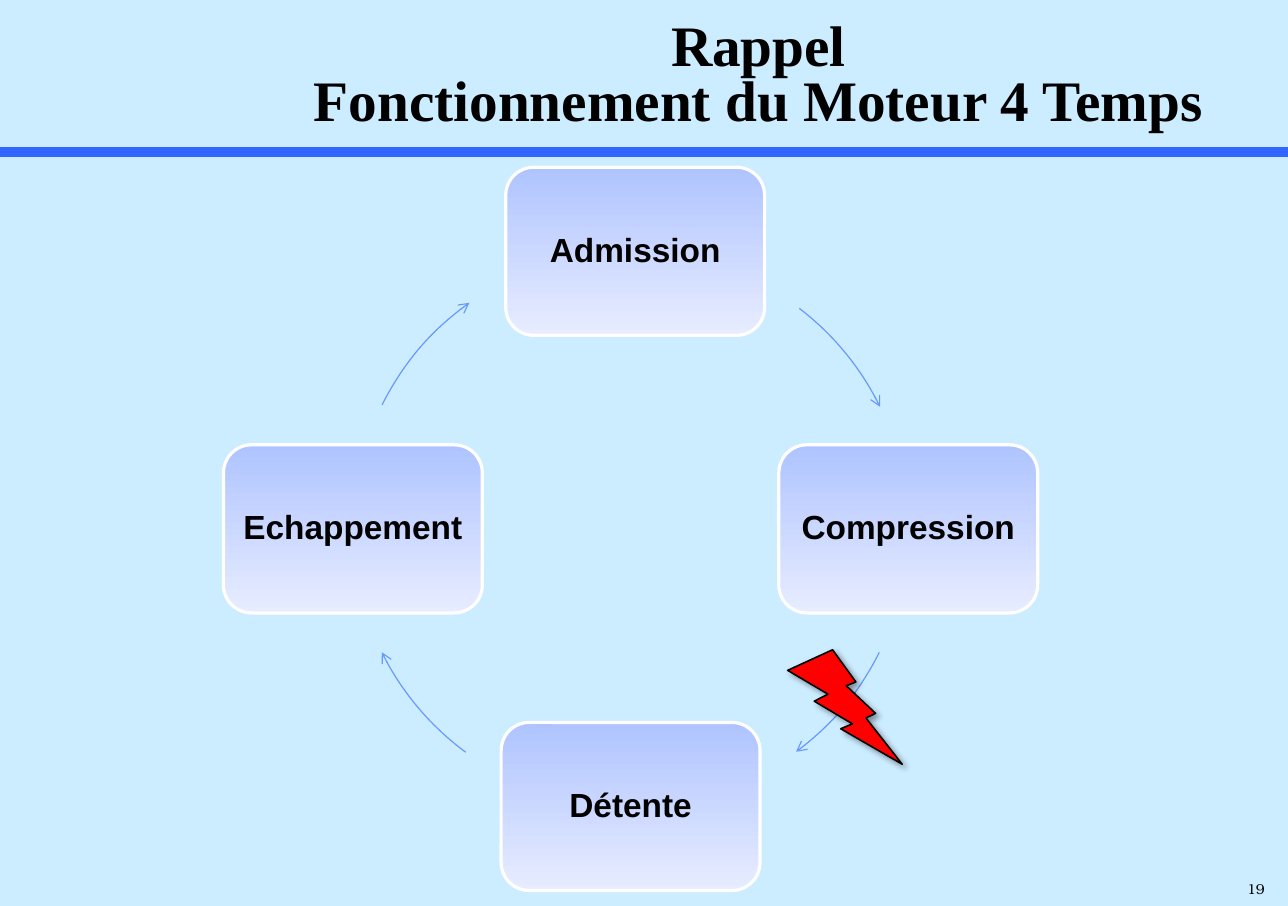
from math import cos, radians, sin

from lxml.etree import SubElement
from pptx import Presentation
from pptx.dml.color import RGBColor
from pptx.enum.shapes import MSO_CONNECTOR, MSO_SHAPE
from pptx.enum.text import MSO_ANCHOR, PP_ALIGN
from pptx.oxml.ns import qn
from pptx.util import Pt

COLORS = {
    "background": "CCECFF",
    "rule": "3366FF",
    "arrow": "6699FF",
    "step_top": "AFC4FF",
    "step_bottom": "E7ECFF",
    "step_border": "FFFFFF",
    "spark": "FF0000",
    "ink": "000000",
}
WIDTH, HEIGHT = Pt(810), Pt(570)

# Percentages of the slide's width (x) and height (y)
RING_X, RING_Y = 48.96, 58.38
RADIUS_X = 21.56
RADIUS_Y = RADIUS_X * WIDTH / HEIGHT
STEP_WIDTH, STEP_HEIGHT = 20.1, 18.55

# Name, angle on the ring (clockwise degrees), sideways shift
STEPS = [
    ("Admission", 270, 0.36),
    ("Compression", 0, 0),
    ("Détente", 90, 0),
    ("Echappement", 180, 0),
]
# Start and end angles of the arrows, clockwise degrees
ARROWS = [(307.4, 333.9), (26.4, 53.4), (126.4, 153.6), (206.5, 234.5)]


def color(name):
    return RGBColor.from_string(COLORS[name])


def area(left, top, width, height):
    """Turn percentages of the slide into lengths."""
    return (round(WIDTH * left / 100), round(HEIGHT * top / 100),
            round(WIDTH * width / 100), round(HEIGHT * height / 100))


def centred_area(x, y, width, height):
    return area(x - width / 2, y - height / 2, width, height)


def write(frame, text, *, font, size, bold=False, align=PP_ALIGN.CENTER,
          spacing=0.9, wrap=True):
    frame.word_wrap = wrap
    frame.vertical_anchor = MSO_ANCHOR.MIDDLE
    paragraph = frame.paragraphs[0]
    paragraph.text = text
    paragraph.alignment = align
    paragraph.line_spacing = spacing
    paragraph.font.name = font
    paragraph.font.size = Pt(size)
    paragraph.font.bold = bold
    paragraph.font.color.rgb = color("ink")


def add_title(slide, text):
    title = slide.shapes.title
    title.left, title.top, title.width, title.height = area(
        17.78, 1.77, 82.22, 13.64)
    write(title.text_frame, text, font="Times New Roman", size=36, bold=True,
          spacing=0.8)


def add_rule(slide, y):
    left, top, width, _ = area(0, y, 100, 0)
    rule = slide.shapes.add_connector(
        MSO_CONNECTOR.STRAIGHT, left, top, left + width, top)
    rule.line.color.rgb = color("rule")
    rule.line.width = Pt(6)
    SubElement(rule._element.spPr, qn("a:effectLst"))


def add_step(slide, name, angle, shift):
    x = RING_X + RADIUS_X * cos(radians(angle)) + shift
    y = RING_Y + RADIUS_Y * sin(radians(angle))
    step = slide.shapes.add_shape(
        MSO_SHAPE.ROUNDED_RECTANGLE,
        *centred_area(x, y, STEP_WIDTH, STEP_HEIGHT))
    step.shadow.inherit = False
    step.fill.gradient()
    step.fill.gradient_angle = 270
    for stop, shade in zip(step.fill.gradient_stops,
                           ("step_top", "step_bottom")):
        stop.color.rgb = color(shade)
    step.line.color.rgb = color("step_border")
    step.line.width = Pt(2)
    write(step.text_frame, name, font="Arial", size=21, bold=True)


def add_ring_arrow(slide, start, end):
    arrow = slide.shapes.add_shape(
        MSO_SHAPE.ARC,
        *centred_area(RING_X, RING_Y, 2 * RADIUS_X, 2 * RADIUS_Y))
    arrow.shadow.inherit = False
    # Adjustments count in 100000ths, angles in 60000ths of a degree
    arrow.adjustments[0] = start * 0.6
    arrow.adjustments[1] = end * 0.6
    arrow.fill.background()
    arrow.line.color.rgb = color("arrow")
    arrow.line.width = Pt(0.75)
    SubElement(arrow.line._get_or_add_ln(), qn("a:tailEnd"), type="arrow")


def add_spark(slide):
    spark = slide.shapes.add_shape(
        MSO_SHAPE.LIGHTNING_BOLT, *area(61.16, 71.72, 8.89, 12.63))
    spark.fill.solid()
    spark.fill.fore_color.rgb = color("spark")
    spark.line.color.rgb = color("ink")
    spark.line.width = Pt(1)
    spark.shadow.inherit = False
    effects = spark._element.spPr.find(qn("a:effectLst"))
    shadow = SubElement(effects, qn("a:outerShdw"), blurRad=str(Pt(4)),
                        dist=str(Pt(3)), dir=str(45 * 60000), algn="tl",
                        rotWithShape="0")
    tint = SubElement(shadow, qn("a:srgbClr"), val=COLORS["ink"])
    SubElement(tint, qn("a:alpha"), val="40000")


def add_page_number(slide, number):
    box = slide.shapes.add_textbox(*area(95.95, 96.5, 4.18, 3.5))
    write(box.text_frame, number, font="TeX Gyre Bonum", size=9,
          align=PP_ALIGN.LEFT, spacing=0.75, wrap=False)


def main():
    deck = Presentation()
    deck.slide_width, deck.slide_height = WIDTH, HEIGHT
    slide = deck.slides.add_slide(deck.slide_layouts.get_by_name("Title Only"))
    slide.background.fill.solid()
    slide.background.fill.fore_color.rgb = color("background")

    add_title(slide, "Rappel\vFonctionnement du Moteur 4 Temps")
    add_rule(slide, 16.8)
    for step in STEPS:
        add_step(slide, *step)
    for arrow in ARROWS:
        add_ring_arrow(slide, *arrow)
    add_spark(slide)
    add_page_number(slide, "19")
    deck.save("out.pptx")


if __name__ == "__main__":
    main()
